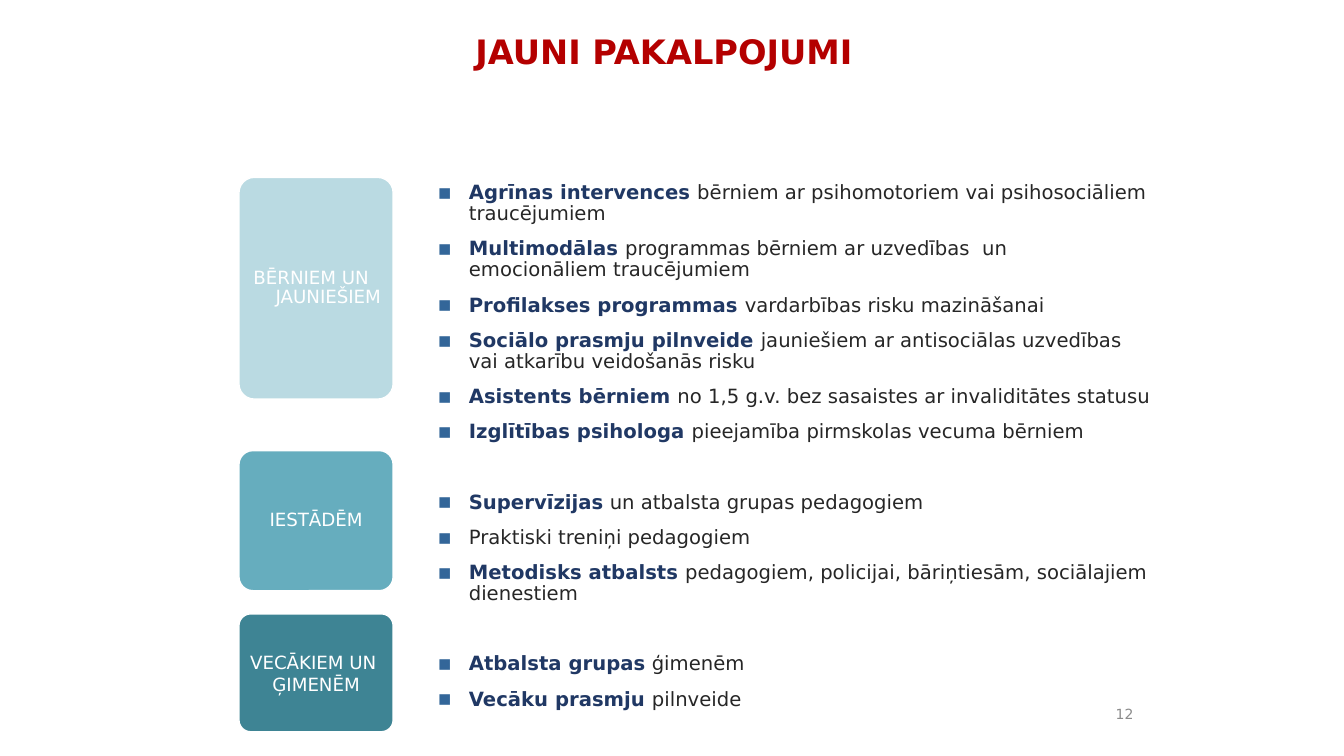
"""Build the slide that lists new services by target group."""
from dataclasses import dataclass

from lxml.etree import SubElement
from pptx import Presentation
from pptx.dml.color import RGBColor
from pptx.enum.shapes import MSO_SHAPE as Shape
from pptx.enum.text import MSO_ANCHOR as Anchor, MSO_AUTO_SIZE as AutoSize, PP_ALIGN as Align
from pptx.oxml.ns import qn
from pptx.util import Inches, Pt

FONT = "DejaVu Sans"
WHITE, RED, NAVY = "FFFFFF", "B40000", "203864"
DARK, GREY, BULLET = "262626", "8C8C8C", "336699"


@dataclass
class Group:
    lines: list[str]
    top: float
    height: float
    fill: str
    services: list[tuple[str, str]]
    opacity: int = 100
    hanging: float = 0
    line_spacing: float = 0.9


GROUPS = [
    Group(["BĒRNIEM UN JAUNIEŠIEM"], 1.76, 2.2, "B3D7DF", [
        ("Agrīnas intervences ", "bērniem ar psihomotoriem vai psihosociāliem traucējumiem"),
        ("Multimodālas ", "programmas bērniem ar uzvedības  un emocionāliem traucējumiem"),
        ("Profilakses programmas ", "vardarbības risku mazināšanai"),
        ("Sociālo prasmju pilnveide ",
         "jauniešiem ar antisociālas uzvedības vai atkarību veidošanās risku"),
        ("Asistents bērniem ", "no 1,5 g.v. bez sasaistes ar invaliditātes statusu"),
        ("Izglītības psihologa ", "pieejamība pirmskolas vecuma bērniem"),
    ], opacity=90, hanging=0.22),
    Group(["IESTĀDĒM"], 4.47, 1.39, "66ADBE", [
        ("Supervīzijas", " un atbalsta grupas pedagogiem"),
        ("", "Praktiski treniņi pedagogiem"),
        ("Metodisks atbalsts ", "pedagogiem, policijai, bāriņtiesām, sociālajiem dienestiem"),
    ]),
    Group(["VECĀKIEM UN ", "ĢIMENĒM"], 6.09, 1.17, "3E8494", [
        ("Atbalsta grupas", " ģimenēm"),
        ("Vecāku prasmju ", "pilnveide"),
    ], line_spacing=1),
]


def rgb(color: str) -> RGBColor:
    """Turn a hex string into a colour."""
    return RGBColor.from_string(color)


def style(font, size: float, color: str, bold: bool = False) -> None:
    """Set the typeface, size, colour and weight of a font."""
    font.name, font.size, font.bold = FONT, Pt(size), bold
    font.color.rgb = rgb(color)


def place(shape, left: float, top: float, width: float, height: float) -> None:
    """Move and size a shape, in inches."""
    shape.left, shape.top = Inches(left), Inches(top)
    shape.width, shape.height = Inches(width), Inches(height)


def set_indent(paragraph, left: float, first: float):
    """Set the left margin and first-line indent, and return the properties."""
    properties = paragraph._p.get_or_add_pPr()
    properties.set("marL", str(Inches(left)))
    properties.set("indent", str(Inches(first)))
    return properties


def add_bullet(paragraph) -> None:
    """Give a paragraph a small square bullet."""
    properties = set_indent(paragraph, 0.31, -0.31)
    color = SubElement(properties, qn("a:buClr"))
    SubElement(color, qn("a:srgbClr"), val=BULLET)
    SubElement(properties, qn("a:buSzPct"), val="108000")
    SubElement(properties, qn("a:buFont"), typeface=FONT)
    SubElement(properties, qn("a:buChar"), char="▪")


def add_title(slide) -> None:
    """Fill the title placeholder."""
    title = slide.shapes.title
    place(title, 3.25, 0.3, 6.67, 1.22)
    frame = title.text_frame
    frame.text = "JAUNI PAKALPOJUMI"
    frame.vertical_anchor, frame.auto_size = Anchor.TOP, AutoSize.NONE
    paragraph = frame.paragraphs[0]
    paragraph.alignment, paragraph.line_spacing = Align.CENTER, 0.9
    style(paragraph.font, 24, RED, bold=True)


def add_services(slide) -> None:
    """List the services of every group in the body placeholder."""
    body = slide.placeholders[1]
    place(body, 4.24, 1.76, 7.28, 4.74)
    frame = body.text_frame
    frame.vertical_anchor, frame.auto_size = Anchor.TOP, AutoSize.NONE
    for group_index, group in enumerate(GROUPS):
        for index, (lead, rest) in enumerate(group.services):
            first = group_index == index == 0
            paragraph = frame.paragraphs[0] if first else frame.add_paragraph()
            add_bullet(paragraph)
            paragraph.line_spacing = 0.9
            paragraph.space_before = Pt(0 if first else 10 if index else 35)
            style(paragraph.font, 14, DARK)
            if lead:
                run = paragraph.add_run()
                run.text = lead
                style(run.font, 14, NAVY, bold=True)
            paragraph.add_run().text = rest


def add_group_label(slide, group: Group) -> None:
    """Draw the rounded box that names a group."""
    box = slide.shapes.add_shape(Shape.ROUNDED_RECTANGLE, Inches(2.37), Inches(group.top),
                                 Inches(1.53), Inches(group.height))
    box.shadow.inherit = False
    box.adjustments[0] = 0.1
    box.fill.solid()
    box.fill.fore_color.rgb = rgb(group.fill)
    if group.opacity < 100:
        color = box._element.spPr.find(qn("a:solidFill")).find(qn("a:srgbClr"))
        SubElement(color, qn("a:alpha"), val=str(group.opacity * 1000))
    box.line.color.rgb, box.line.width = rgb(WHITE), Pt(1)
    frame = box.text_frame
    frame.word_wrap, frame.vertical_anchor = True, Anchor.MIDDLE
    frame.margin_left = frame.margin_right = Inches(0.05)
    frame.text = "\n".join(group.lines)
    for paragraph in frame.paragraphs:
        paragraph.alignment, paragraph.line_spacing = Align.CENTER, group.line_spacing
        if group.hanging:
            paragraph.alignment = Align.LEFT
            set_indent(paragraph, 0.05 + group.hanging, -group.hanging)
        style(paragraph.font, 13, WHITE)


def add_page_number(slide) -> None:
    """Write the page number at the lower right."""
    box = slide.shapes.add_textbox(Inches(10.68), Inches(6.92), Inches(0.66), Inches(0.33))
    frame = box.text_frame
    frame.word_wrap, frame.vertical_anchor = True, Anchor.MIDDLE
    frame.text = "12"
    paragraph = frame.paragraphs[0]
    paragraph.alignment = Align.RIGHT
    style(paragraph.font, 10, GREY)


def main() -> None:
    """Build and save the presentation."""
    presentation = Presentation()
    presentation.slide_width, presentation.slide_height = Inches(13.33), Inches(7.5)
    slide = presentation.slides.add_slide(presentation.slide_layouts[1])
    add_title(slide)
    add_services(slide)
    for group in GROUPS:
        add_group_label(slide, group)
    add_page_number(slide)
    presentation.save("out.pptx")


if __name__ == "__main__":
    main()
